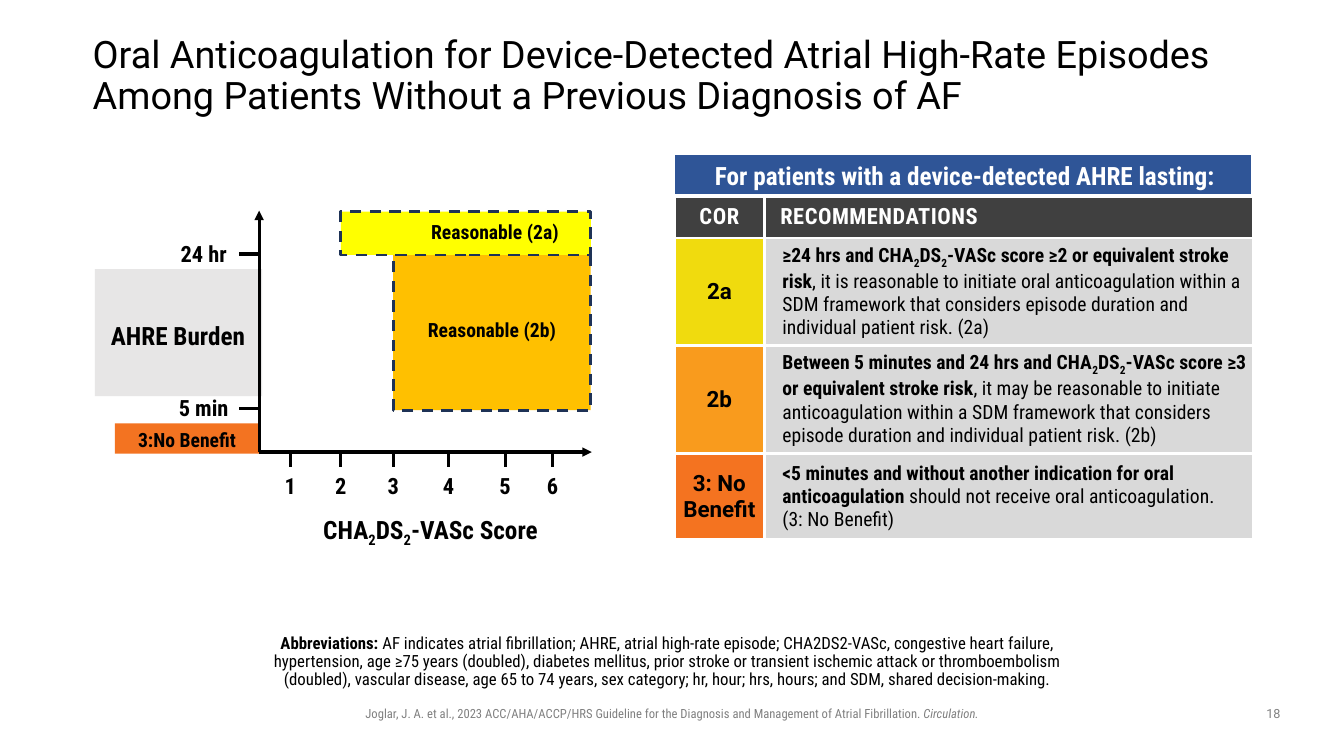
from lxml import etree
from pptx import Presentation
from pptx.dml.color import RGBColor
from pptx.enum.dml import MSO_LINE
from pptx.enum.shapes import MSO_CONNECTOR, MSO_SHAPE
from pptx.enum.text import MSO_ANCHOR, PP_ALIGN
from pptx.oxml.ns import qn
from pptx.util import Inches, Pt

DASH = MSO_LINE.DASH
STRAIGHT = MSO_CONNECTOR.STRAIGHT
RECTANGLE = MSO_SHAPE.RECTANGLE
TOP, MIDDLE = MSO_ANCHOR.TOP, MSO_ANCHOR.MIDDLE
LEFT, CENTER = PP_ALIGN.LEFT, PP_ALIGN.CENTER

THEME = {
    "plain": "Roboto", "condensed": "Roboto Condensed",
    "title": 27, "heading": 18, "label": 16, "text": 14, "abbreviations": 12, "footer": 9,
    "black": "000000", "white": "FFFFFF", "muted": "808080",
    "banner": "2F5597", "header": "404040", "recommendation": "D9D9D9",
    "burden": "E7E6E6", "no benefit": "F37321", "dash": "1E3256",
    "zone 2a": "FFFF00", "zone 2b": "FFC000",
    "cor 2a": "F0DB0E", "cor 2b": "F99B1D", "cor 3": "F47320",
}
SCORE = [("CHA", "b"), ("2", "bs"), ("DS", "b"), ("2", "bs")]


def grid(*cells):
    """Lengths counted in columns and rows of a tenth of an inch."""
    return [Inches(cell / 10) for cell in cells]


def write(frame, runs, size="text", font="condensed", color="black", align=CENTER,
          anchor=TOP, spacing=1.0, tracking=0, margins=(1, 0.5, 1, 0.5)):
    """Write (text, style) runs; style letters: b bold, i italic, s subscript."""
    frame.word_wrap = True
    frame.vertical_anchor = anchor
    (frame.margin_left, frame.margin_top,
     frame.margin_right, frame.margin_bottom) = grid(*margins)
    paragraph = frame.paragraphs[0]
    paragraph.alignment = align
    paragraph.line_spacing = spacing
    for text, style in runs:
        for number, part in enumerate(text.split("\n")):
            if number:
                paragraph.add_line_break()
            run = paragraph.add_run()
            run.text = part
            run.font.name = THEME[font]
            run.font.size = Pt(THEME[size])
            run.font.color.rgb = RGBColor.from_string(THEME[color])
            run.font.bold = "b" in style
            run.font.italic = "i" in style
            properties = run._r.get_or_add_rPr()
            if "s" in style:
                properties.set("baseline", "-25000")
            if tracking:
                properties.set("spc", str(tracking))


presentation = Presentation()
presentation.slide_width, presentation.slide_height = grid(133.3, 75)
slide = presentation.slides.add_slide(presentation.slide_layouts[6])
shapes = slide.shapes

# Banner, axis bands and recommendation zones: box, fill, outline, outline width, dash
rectangles = [
    ((66.8, 15.2, 57.4, 4.2), "banner", "white", 2, None),
    ((9.4, 26.7, 16.6, 12.6), "burden", None, 0, None),
    ((11.4, 42, 14.3, 3), "no benefit", None, 0, None),
    ((39, 25.2, 19.6, 15.5), "zone 2b", "dash", 2, DASH),
    ((33.8, 21, 24.8, 4.3), "zone 2a", "dash", 2, DASH),
]
for box, fill, outline, width, dash in rectangles:
    shape = shapes.add_shape(RECTANGLE, *grid(*box))
    shape.shadow.inherit = False
    shape.fill.solid()
    shape.fill.fore_color.rgb = RGBColor.from_string(THEME[fill])
    if outline:
        shape.line.color.rgb = RGBColor.from_string(THEME[outline])
        shape.line.width = Pt(width)
        shape.line.dash_style = dash
    else:
        shape.line.fill.background()

# Axes with arrowheads, then ticks
origin_x, origin_y = 25.7, 44.85
score_ticks = [28.8, 33.8, 39, 44.5, 50.1, 54.8]
burden_ticks = [("24 hr", 25.2), ("5 min", 40.5)]
lines = [((origin_x, origin_y, 58.7, origin_y), True),
         ((origin_x, origin_y, origin_x, 20.9), True)]
lines += [((x, origin_y, x, origin_y + 1.5), False) for x in score_ticks]
lines += [((origin_x, y, origin_x - 2, y), False) for _, y in burden_ticks]
for ends, arrow in lines:
    connector = shapes.add_connector(STRAIGHT, *grid(*ends))
    connector.line.color.rgb = RGBColor.from_string(THEME["black"])
    connector.line.width = Pt(2.25)
    if arrow:
        etree.SubElement(connector.line._get_or_add_ln(), qn("a:tailEnd"), type="triangle")
    etree.SubElement(connector._element.spPr, qn("a:effectLst"))

# Text blocks: box, runs, format
flush = (0, 0, 0, 0)
heading = {"size": "heading"}
label = {"size": "label"}
texts = [
    ((9.2, 4, 119.3, 7.2),
     [("Oral Anticoagulation for Device-Detected Atrial High-Rate Episodes "
       "Among Patients Without a Previous Diagnosis of AF", "")],
     {"size": "title", "font": "plain", "align": LEFT, "anchor": MIDDLE,
      "spacing": 0.9, "margins": flush}),
    ((67.8, 16.1, 55.8, 3), [("For patients with a device-detected AHRE lasting:", "b")],
     {"size": "heading", "color": "white", "anchor": MIDDLE, "spacing": 0.9,
      "margins": flush}),
    ((40, 31, 17.6, 3.4), [("Reasonable (2b)", "b")], {}),
    ((37.8, 21.3, 22.6, 3.4), [("Reasonable (2a)", "b")], {}),
    ((11.4, 42, 14.3, 3.4), [("3:No Benefit", "b")], {}),
    ((28.8, 50.5, 27.8, 4), SCORE + [("-VASc Score", "b")], heading),
    ((9.7, 31.3, 15.9, 4), [("AHRE Burden", "b")], heading),
    ((25.8, 62.5, 81.8, 5.4),
     [("Abbreviations: ", "b"),
      ("AF indicates atrial fibrillation; AHRE, atrial high-rate episode; CHA2DS2-VASc, "
       "congestive heart failure, hypertension, age ≥75 years (doubled), diabetes mellitus, "
       "prior stroke or transient ischemic attack or thromboembolism (doubled), vascular "
       "disease, age 65 to 74 years, sex category; hr, hour; hrs, hours; and SDM, shared "
       "decision-making.", "")],
     {"size": "abbreviations", "spacing": 0.9, "margins": (0, 0.5, 1, 0.5)}),
    ((29.4, 69.5, 74.5, 2.5),
     [("Joglar, J. A. et al., 2023 ACC/AHA/ACCP/HRS Guideline for the Diagnosis and "
       "Management of Atrial Fibrillation. ", ""), ("Circulation.", "i")],
     {"size": "footer", "color": "muted"}),
    ((124.2, 69.5, 4.2, 2.6), [("18", "")],
     {"size": "footer", "font": "plain", "color": "muted"}),
]
texts += [((x - 1.85, origin_y + 1.5, 3.7, 3.7), [(str(score), "b")], label)
          for score, x in enumerate(score_ticks, start=1)]
texts += [((16.4, y - 1.9, 7.6, 3.7), [(name, "b")], label) for name, y in burden_ticks]
for box, runs, style in texts:
    write(shapes.add_textbox(*grid(*box)).text_frame, runs, **style)

# Recommendation table: class, class fill, recommendation
recommendations = [
    ("2a", "cor 2a",
     [("≥24 hrs and ", "b"), *SCORE, ("-VASc score ≥2 or equivalent stroke risk", "b"),
      (", it is reasonable to initiate oral anticoagulation within a SDM framework that "
       "considers episode duration and individual patient risk. (2a)", "")]),
    ("2b", "cor 2b",
     [("Between 5 minutes and 24 hrs and ", "b"), *SCORE,
      ("-VASc score ≥3 or equivalent stroke risk", "b"),
      (", it may be reasonable to initiate anticoagulation within a SDM framework that "
       "considers episode duration and individual patient risk. (2b)", "")]),
    ("3: No Benefit", "cor 3",
     [("<5 minutes and without another indication for oral anticoagulation", "b"),
      (" should not receive oral anticoagulation. \n(3: No Benefit)", "")]),
]
column_widths, row_heights = (8.9, 48.5), (4.1, 10.7, 10.6, 8.6)
table = shapes.add_table(len(row_heights), len(column_widths),
                         *grid(66.9, 19.5, sum(column_widths), sum(row_heights))).table
table.first_row = table.horz_banding = False
for column, width in zip(table.columns, grid(*column_widths)):
    column.width = width
for row, height in zip(table.rows, grid(*row_heights)):
    row.height = height

header = {"size": "label", "color": "white"}
rows = [[([("COR", "b")], "header", {**header, "tracking": 50}),
         ([("RECOMMENDATIONS", "b")], "header",
          {**header, "tracking": 40, "align": LEFT, "margins": (1.6, 0.5, 1, 0.5)})]]
for name, fill, runs in recommendations:
    rows.append([
        ([(name, "b")], fill, {"size": "label", "font": "plain", "margins": (0.5,) * 4}),
        (runs, "recommendation", {"align": LEFT, "margins": (1.8, 0.5, 0.5, 0.5)})])
for row_number, row in enumerate(rows):
    for column_number, (runs, fill, style) in enumerate(row):
        cell = table.cell(row_number, column_number)
        write(cell.text_frame, runs, **{**style, "margins": flush})
        cell.vertical_anchor = MIDDLE
        (cell.margin_left, cell.margin_top, cell.margin_right,
         cell.margin_bottom) = grid(*style.get("margins", (1, 0.5, 1, 0.5)))
        cell.fill.solid()
        cell.fill.fore_color.rgb = RGBColor.from_string(THEME[fill])
        properties = cell._tc.get_or_add_tcPr()
        for position, side in enumerate(("a:lnL", "a:lnR", "a:lnT", "a:lnB")):
            border = etree.Element(qn(side), w=str(Pt(2.25)))
            paint = etree.SubElement(border, qn("a:solidFill"))
            etree.SubElement(paint, qn("a:srgbClr"), val=THEME["white"])
            properties.insert(position, border)

presentation.save("out.pptx")
